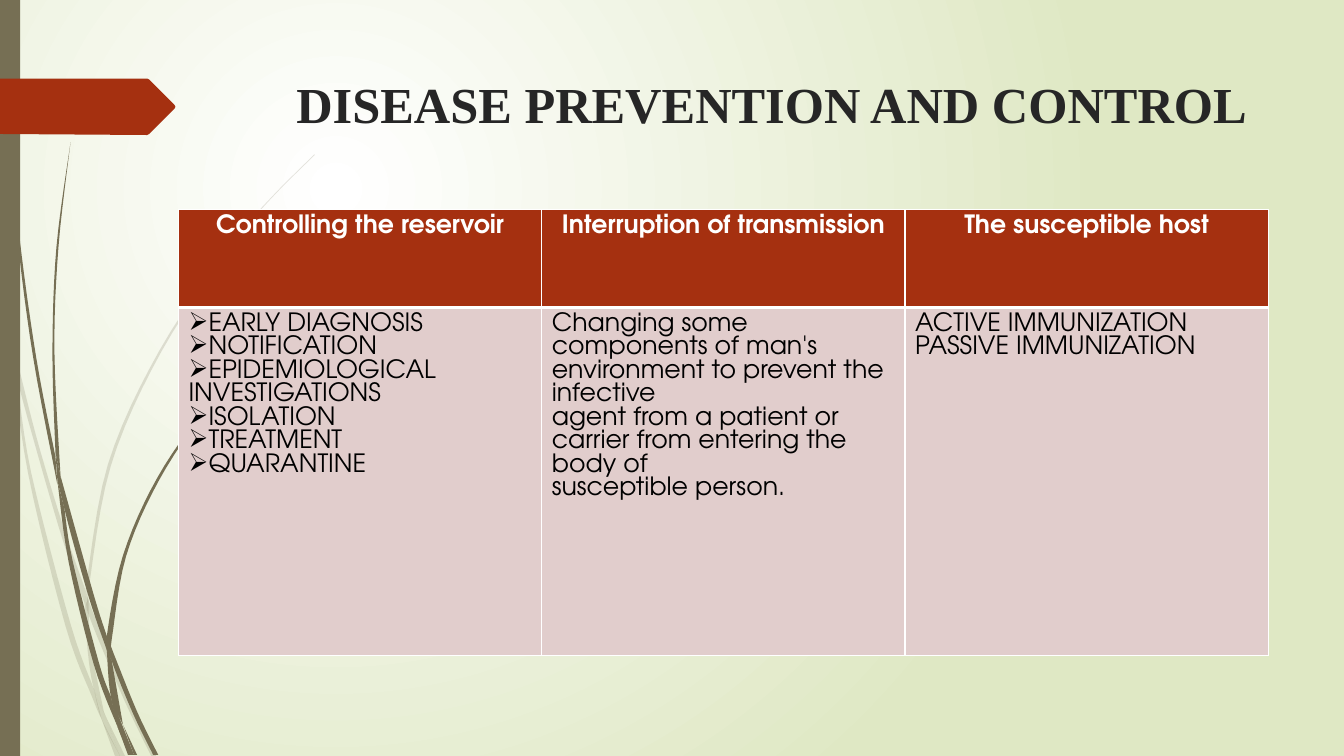
from dataclasses import dataclass

from lxml.etree import SubElement
from pptx import Presentation
from pptx.dml.color import RGBColor
from pptx.enum.shapes import MSO_SHAPE
from pptx.enum.text import MSO_ANCHOR, PP_ALIGN
from pptx.oxml.ns import qn
from pptx.util import Inches, Pt


@dataclass(frozen=True)
class Theme:
    white: str = "FFFFFF"
    black: str = "000000"
    ink: str = "262626"
    rust: str = "A53010"
    rose: str = "E1CDCC"
    olive: str = "766F54"
    lime: str = "DFE8C4"
    serif: str = "Times New Roman"
    sans: str = "TeX Gyre Adventor"
    title: int = 36
    body: int = 18


THEME = Theme()

# Each blade of grass has two edges, drawn down one side and back up the other
PALE = [
    ([(0.11, 3.5), (0.09, 3.22), (0, 2.82)], [(0, 2.99), (0.1, 3.44)]),
    ([(0.14, 3.45), (0.17, 3.76), (0.58, 5.22), (0.84, 5.99)],
     [(0.85, 5.86), (0.62, 5.2), (0.36, 4.33), (0.14, 3.45)]),
    ([(0.88, 5.96), (0.88, 6.1), (1.23, 6.94), (1.5, 7.5)],
     [(1.55, 7.5), (1.27, 6.92), (0.92, 6.07)]),
    ([(1.19, 7.5), (1.24, 7.5)], [(1.05, 7.11)]),
    ([(0.11, 3.5), (0.28, 4.7), (0.65, 6.21), (0.92, 6.93), (1.01, 7.14)],
     [(0.93, 6.83), (0.7, 6.19), (0.31, 4.69), (0.17, 3.76)]),
    ([(0.84, 5.99), (0.87, 6.46), (0.93, 6.83), (1.05, 7.11)],
     [(1.03, 7.06), (0.91, 6.46), (0.88, 6.1)]),
    ([(0.88, 5.96), (0.88, 5.84), (1.1, 4.62), (1.6, 3.49), (2.29, 2.45),
      (2.68, 1.98), (3.12, 1.54)],
     [(3.12, 1.53), (2.68, 1.97), (2.28, 2.44), (1.58, 3.48), (1.07, 4.61),
      (0.85, 5.84)]),
    ([(1.01, 7.14), (1.14, 7.5)], [(1.19, 7.5)]),
    ([(0.84, 5.99), (0.88, 6.1)], [(0.88, 5.96), (0.85, 5.86)]),
    ([(0.93, 6.83), (1.01, 7.14), (1.19, 7.5)], [(1.05, 7.11), (0.96, 6.92)]),
]
DARK = [
    ([(0.03, 0), (0.07, 1.1), (0.17, 2.33), (0.33, 3.55), (0.57, 4.81)],
     [(0.55, 4.53), (0.36, 3.55), (0.19, 2.32), (0.08, 1.09), (0.04, 0)]),
    ([(0.6, 4.72), (0.64, 5.05), (0.88, 5.92), (1.06, 6.45)],
     [(1.06, 6.31), (0.93, 5.9), (0.6, 4.72)]),
    ([(1.1, 6.41), (1.11, 6.56), (1.32, 7.08), (1.52, 7.49)],
     [(1.57, 7.49), (1.36, 7.06), (1.13, 6.49)]),
    ([(0.57, 4.77), (0.68, 5.57), (0.93, 6.59), (1.17, 7.22)],
     [(1.1, 6.91), (0.98, 6.57), (0.72, 5.56), (0.64, 5.05)]),
    ([(0.6, 4.72), (0.54, 3.49), (0.58, 2.45), (0.7, 1.41)],
     [(0.7, 1.41), (0.56, 2.45), (0.52, 3.49), (0.55, 4.49)]),
    ([(1.33, 7.49), (1.36, 7.49)], [(1.22, 7.19)]),
    ([(0.57, 4.77), (0.64, 5.05)], [(0.6, 4.72), (0.55, 4.49)]),
    ([(1.11, 6.33), (1.25, 5.52), (1.58, 4.76), (2.05, 4.06), (2.6, 3.44)],
     [(2.6, 3.44), (2.04, 4.05), (1.56, 4.74), (1.22, 5.51), (1.06, 6.31),
      (1.1, 6.41)]),
    ([(1.17, 7.22), (1.27, 7.49)], [(1.31, 7.49)]),
    ([(1.06, 6.45), (1.1, 6.91), (1.22, 7.19)], [(1.11, 6.56)]),
    ([(1.06, 6.31), (1.06, 6.45), (1.11, 6.56)], [(1.1, 6.41)]),
    ([(1.1, 6.91), (1.17, 7.22), (1.3, 7.49)], [(1.33, 7.49), (1.16, 7.06)]),
]
ARROW = [(0, 0.78), (1.46, 0.78), (1.48, 0.79), (1.73, 1.04), (1.74, 1.06),
         (1.73, 1.08), (1.48, 1.33), (1.46, 1.34), (0, 1.33)]

HEADS = ["Controlling the reservoir", "Interruption of transmission",
         "The susceptible host"]
BODY = [
    ["EARLY DIAGNOSIS", "NOTIFICATION", "EPIDEMIOLOGICAL INVESTIGATIONS",
     "ISOLATION", "TREATMENT", "QUARANTINE"],
    ["Changing some",
     "components of man's environment to prevent the infective",
     "agent from a patient or carrier from entering the body of",
     "susceptible person."],
    ["ACTIVE IMMUNIZATION", "PASSIVE IMMUNIZATION"],
]


def tint(fill, color):
    fill.solid()
    fill.fore_color.rgb = RGBColor.from_string(color)


def plain(shape, color):
    tint(shape.fill, color)
    shape.line.fill.background()
    shape.shadow.inherit = False


def curve(knots, steps=6):
    """Smooth an edge with a Catmull-Rom spline."""
    ends = [knots[0], *knots, knots[-1]]
    dots = [knots[0]]
    for a, b, c, d in zip(ends, ends[1:], ends[2:], ends[3:]):
        for t in (i / steps for i in range(1, steps + 1)):
            dots.append(tuple(
                (2 * q + (r - p) * t + (2 * p - 5 * q + 4 * r - s) * t ** 2
                 + (3 * q - p - 3 * r + s) * t ** 3) / 2
                for p, q, r, s in zip(a, b, c, d)))
    return dots


def trace(shapes, dots, color):
    first, *rest = [(Inches(x), Inches(y)) for x, y in dots]
    pen = shapes.build_freeform(*first)
    pen.add_line_segments(rest, close=True)
    shape = pen.convert_to_shape()
    plain(shape, color)
    return shape


def grass(slide, blades, alpha=100):
    group = slide.shapes.add_group_shape()
    for down, back in blades:
        blade = trace(group.shapes, curve(down) + curve(back), THEME.olive)
        if alpha < 100:
            tone = blade.fill._xPr.find(qn("a:solidFill"))[0]
            SubElement(tone, qn("a:alpha"), val=str(alpha * 1000))


def backdrop(slide):
    fill = slide.background.fill
    fill.gradient()
    for stop, place, color in zip(fill.gradient_stops, (0, 1),
                                  (THEME.white, THEME.lime)):
        stop.position = place
        stop.color.rgb = RGBColor.from_string(color)
    grad = slide.background._cSld.find(".//" + qn("a:gradFill"))
    grad.remove(grad.find(qn("a:lin")))
    round_ = SubElement(grad, qn("a:path"), {"path": "circle"})
    SubElement(round_, qn("a:fillToRect"),
               l="50000", t="50000", r="100000", b="100000")


def write(para, text, font, size, color, bold=False):
    run = para.add_run()
    run.text = text
    run.font.name = font
    run.font.size = Pt(size)
    run.font.bold = bold
    run.font.color.rgb = RGBColor.from_string(color)


def title(slide, text):
    box = slide.shapes.add_textbox(Inches(2.84), Inches(0.68),
                                   Inches(9.75), Inches(1.4))
    frame = box.text_frame
    frame.word_wrap = True
    frame.vertical_anchor = MSO_ANCHOR.TOP
    write(frame.paragraphs[0], text, THEME.serif, THEME.title, THEME.ink, True)


def border(cell, top, base):
    props = cell._tc.get_or_add_tcPr()
    for i, (side, width) in enumerate(zip("LRTB", (1, 1, top, base))):
        line = props.makeelement(qn(f"a:ln{side}"), {"w": str(Pt(width))})
        tone = SubElement(line, qn("a:solidFill"))
        SubElement(tone, qn("a:srgbClr"), val=THEME.white)
        props.insert(i, line)


def fill_cell(cell, lines, head=False, mark=None):
    tint(cell.fill, THEME.rust if head else THEME.rose)
    border(cell, *((1, 3) if head else (3, 1)))
    frame = cell.text_frame
    for i, line in enumerate(lines):
        para = frame.add_paragraph() if i else frame.paragraphs[0]
        para.alignment = PP_ALIGN.CENTER if head else PP_ALIGN.LEFT
        if mark:
            SubElement(para._p.get_or_add_pPr(), qn("a:buChar"), char=mark)
        write(para, line, THEME.sans, THEME.body,
              THEME.white if head else THEME.black, head)


def grid(slide):
    table = slide.shapes.add_table(2, len(HEADS), Inches(1.77), Inches(2.08),
                                   Inches(10.81), Inches(4.42)).table
    for row, height in zip(table.rows, (0.97, 3.45)):
        row.height = Inches(height)
    for i, (head, lines) in enumerate(zip(HEADS, BODY)):
        fill_cell(table.cell(0, i), [head], head=True)
        fill_cell(table.cell(1, i), lines, mark=None if i else "➢")


def main():
    deck = Presentation()
    deck.slide_width, deck.slide_height = Inches(13.33), Inches(7.5)
    slide = deck.slides.add_slide(deck.slide_layouts[6])

    # Scenery
    backdrop(slide)
    grass(slide, PALE, alpha=20)
    grass(slide, DARK)
    bar = slide.shapes.add_shape(MSO_SHAPE.RECTANGLE, 0, 0,
                                 Inches(0.2), Inches(7.5))
    plain(bar, THEME.olive)
    trace(slide.shapes, ARROW, THEME.rust)

    # Content
    title(slide, "DISEASE PREVENTION AND CONTROL")
    grid(slide)
    deck.save("out.pptx")


if __name__ == "__main__":
    main()
